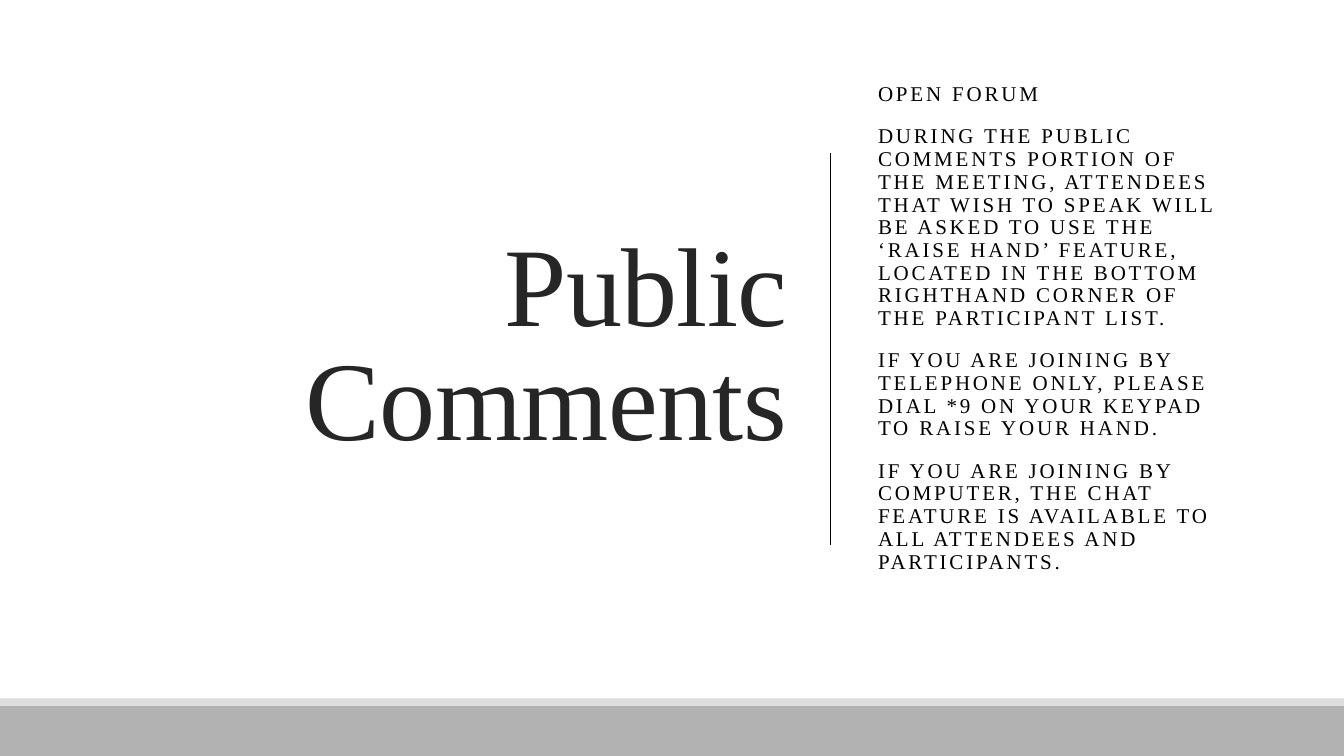
from pptx import Presentation
from pptx.dml.color import RGBColor
from pptx.enum.shapes import MSO_CONNECTOR, MSO_SHAPE
from pptx.enum.text import MSO_ANCHOR, PP_ALIGN
from pptx.oxml.ns import qn
from pptx.util import Inches, Pt

RECTANGLE = MSO_SHAPE.RECTANGLE
STRAIGHT = MSO_CONNECTOR.STRAIGHT
MIDDLE = MSO_ANCHOR.MIDDLE
LEFT = PP_ALIGN.LEFT
RIGHT = PP_ALIGN.RIGHT

WHITE = RGBColor(0xFF, 0xFF, 0xFF)
BLACK = RGBColor(0x00, 0x00, 0x00)
CHARCOAL = RGBColor(0x26, 0x26, 0x26)
GRAY = RGBColor(0xB2, 0xB2, 0xB2)
PALE_GRAY = RGBColor(0xDD, 0xDD, 0xDD)

WIDTH, HEIGHT = 13.33, 7.5
TEXT_TOP, TEXT_HEIGHT = 0.7, 5.53
FOOTER_TOP = 7
STRIPE_HEIGHT = 0.07

INSTRUCTIONS = [
    "OPEN FORUM",
    "DURING THE PUBLIC COMMENTS PORTION OF THE MEETING, ATTENDEES THAT WISH "
    "TO SPEAK WILL BE ASKED TO USE THE ‘RAISE HAND’ FEATURE, LOCATED IN THE "
    "BOTTOM RIGHTHAND CORNER OF THE PARTICIPANT LIST.",
    "IF YOU ARE JOINING BY TELEPHONE ONLY, PLEASE DIAL *9 ON YOUR KEYPAD "
    "TO RAISE YOUR HAND.",
    "IF YOU ARE JOINING BY COMPUTER, THE CHAT FEATURE IS AVAILABLE TO ALL "
    "ATTENDEES AND PARTICIPANTS.",
]


class SlideBuilder:
    font = "Times New Roman"

    def __init__(self, page):
        self.page = page

    def band(self, top, height, color):
        box = self.page.shapes.add_shape(
            RECTANGLE, Inches(0), Inches(top), Inches(WIDTH), Inches(height))
        box.shadow.inherit = False
        box.fill.solid()
        box.fill.fore_color.rgb = color
        box.line.fill.background()

    def divider(self, left, top, bottom):
        line = self.page.shapes.add_connector(
            STRAIGHT, Inches(left), Inches(top), Inches(left), Inches(bottom))
        line.line.color.rgb = BLACK
        line.line.width = Pt(1)
        properties = line._element.spPr
        properties.append(properties.makeelement(qn("a:effectLst"), {}))

    def text(self, left, width, paragraphs, size, color, tracking, line_spacing,
             align=LEFT, before=0, after=0, bottom_inset=0.05):
        box = self.page.shapes.add_textbox(
            Inches(left), Inches(TEXT_TOP), Inches(width), Inches(TEXT_HEIGHT))
        frame = box.text_frame
        frame.word_wrap = True
        frame.vertical_anchor = MIDDLE
        frame.margin_bottom = Inches(bottom_inset)
        frame.text = "\n".join(paragraphs)
        for para in frame.paragraphs:
            para.alignment = align
            para.line_spacing = line_spacing
            para.space_before = Pt(before)
            para.space_after = Pt(after)
            for span in para.runs:
                span.font.name = self.font
                span.font.size = Pt(size)
                span.font.color.rgb = color
                span.font._element.set("spc", str(round(tracking * 100)))


def main():
    deck = Presentation()
    deck.slide_width = Inches(WIDTH)
    deck.slide_height = Inches(HEIGHT)
    builder = SlideBuilder(deck.slides.add_slide(deck.slide_layouts[6]))

    builder.band(0, HEIGHT, WHITE)
    builder.text(1.06, 6.84, ["Public Comments"], 80, CHARCOAL, -0.5, 0.85,
                 align=RIGHT)
    builder.text(8.61, 3.65, INSTRUCTIONS, 15, BLACK, 2, 0.9,
                 before=12, after=2, bottom_inset=0.46)
    builder.divider(8.24, 1.52, 5.41)
    builder.band(FOOTER_TOP, HEIGHT - FOOTER_TOP, GRAY)
    builder.band(FOOTER_TOP - STRIPE_HEIGHT, STRIPE_HEIGHT, PALE_GRAY)

    deck.save("out.pptx")


if __name__ == "__main__":
    main()
